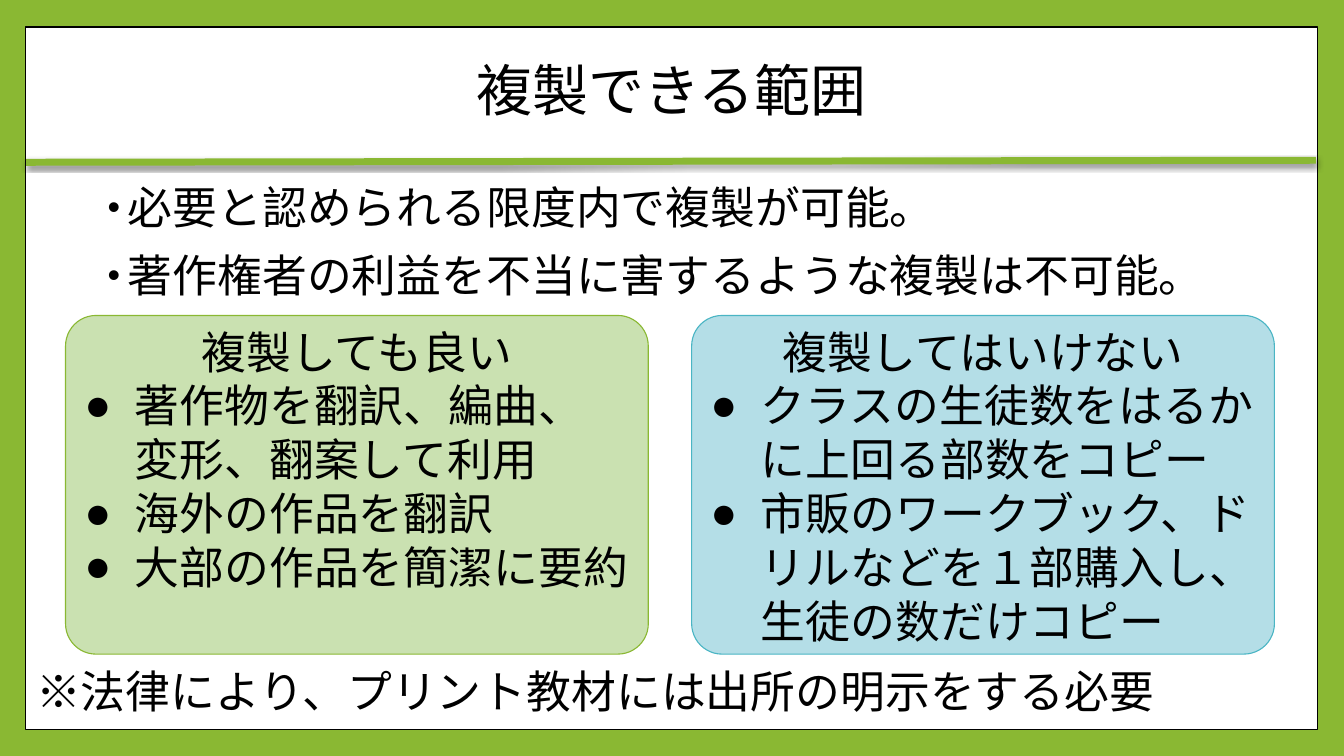
from dataclasses import dataclass

from lxml.etree import SubElement
from pptx import Presentation
from pptx.dml.color import RGBColor
from pptx.enum.shapes import MSO_CONNECTOR, MSO_SHAPE
from pptx.enum.text import MSO_ANCHOR, PP_ALIGN
from pptx.oxml.ns import qn
from pptx.slide import Slide
from pptx.text.text import TextFrame, _Paragraph
from pptx.util import Inches, Pt

GREEN = RGBColor(0x8A, 0xB8, 0x33)
PALE_GREEN = RGBColor(0xCA, 0xE1, 0xB1)
BLUE = RGBColor(0x4A, 0xB5, 0xC4)
PALE_BLUE = RGBColor(0xB4, 0xDE, 0xE7)
BLACK = RGBColor(0, 0, 0)
WHITE = RGBColor(0xFF, 0xFF, 0xFF)

BODY_FONT = "Arial"
TITLE_FONT = "Cabin"
BODY_SIZE = 32
TITLE_SIZE = 40


@dataclass(frozen=True)
class Card:
    left: float
    fill: RGBColor
    outline: RGBColor
    heading: str
    items: tuple[str, ...]


RULES = (
    "必要と認められる限度内で複製が可能。",
    "著作権者の利益を不当に害するような複製は不可能。",
)
CARDS = (
    Card(0.65, PALE_GREEN, GREEN, "複製しても良い", (
        "著作物を翻訳、編曲、　変形、翻案して利用",
        "海外の作品を翻訳",
        "大部の作品を簡潔に要約",
    )),
    Card(6.86, PALE_BLUE, BLUE, "複製してはいけない", (
        "クラスの生徒数をはるかに上回る部数をコピー",
        "市販のワークブック、ドリルなどを１部購入し、生徒の数だけコピー",
    )),
)


def add_paragraph(frame: TextFrame, text: str, align: PP_ALIGN = PP_ALIGN.LEFT,
                  font: str = BODY_FONT, size: int = BODY_SIZE) -> _Paragraph:
    """Fill the frame's first paragraph if it is empty, else append one."""
    first = frame.paragraphs[0]
    paragraph = frame.add_paragraph() if first.runs else first
    paragraph.alignment = align
    run = paragraph.add_run()
    run.text = text
    run.font.name = font
    run.font.size = Pt(size)
    run.font.color.rgb = BLACK
    return paragraph


def add_bullet(paragraph: _Paragraph, character: str, margin: float,
               hanging: float, percent: int = 100) -> None:
    properties = paragraph._p.get_or_add_pPr()
    properties.set("marL", str(Inches(margin)))
    properties.set("indent", str(-Inches(hanging)))
    color = SubElement(properties, qn("a:buClr"))
    SubElement(color, qn("a:srgbClr"), val=str(BLACK))
    SubElement(properties, qn("a:buSzPct"), val=str(percent * 1000))
    SubElement(properties, qn("a:buFont"), typeface=BODY_FONT)
    SubElement(properties, qn("a:buChar"), char=character)


def add_text_frame(slide: Slide, left: float, top: float, width: float,
                   height: float, wrap: bool = True) -> TextFrame:
    box = slide.shapes.add_textbox(
        Inches(left), Inches(top), Inches(width), Inches(height))
    box.text_frame.word_wrap = wrap
    return box.text_frame


def add_panel(slide: Slide) -> None:
    panel = slide.shapes.add_shape(
        MSO_SHAPE.RECTANGLE, Inches(0.25), Inches(0.27), Inches(12.82), Inches(6.97))
    panel.shadow.inherit = False
    panel.fill.solid()
    panel.fill.fore_color.rgb = WHITE
    panel.line.color.rgb = BLACK
    panel.line.width = Pt(1)


def add_divider(slide: Slide) -> None:
    divider = slide.shapes.add_connector(
        MSO_CONNECTOR.STRAIGHT, Inches(0.26), Inches(1.61), Inches(13.05), Inches(1.59))
    divider.line.color.rgb = GREEN
    divider.line.width = Pt(5)
    effects = SubElement(divider._element.spPr, qn("a:effectLst"))
    shadow = SubElement(effects, qn("a:outerShdw"), blurRad=str(Pt(3)),
                        dist=str(Pt(2)), dir="5400000", rotWithShape="0")
    color = SubElement(shadow, qn("a:srgbClr"), val=str(BLACK))
    SubElement(color, qn("a:alpha"), val="45000")


def add_title(slide: Slide) -> None:
    frame = add_text_frame(slide, 0.26, 0.36, 12.8, 1.14)
    frame.vertical_anchor = MSO_ANCHOR.MIDDLE
    title = add_paragraph(frame, "複製できる範囲", PP_ALIGN.CENTER, TITLE_FONT, TITLE_SIZE)
    title.line_spacing = 0.9


def add_rules(slide: Slide) -> None:
    frame = add_text_frame(slide, 0.92, 1.79, 11.5, 1.3)
    for rule in RULES:
        paragraph = add_paragraph(frame, rule)
        paragraph.line_spacing = 0.9
        paragraph.space_before = Pt(14)
        add_bullet(paragraph, "•", 0.25, 0.2, 80)


def add_card(slide: Slide, card: Card) -> None:
    shape = slide.shapes.add_shape(
        MSO_SHAPE.ROUNDED_RECTANGLE, Inches(card.left), Inches(3.13),
        Inches(5.78), Inches(3.36))
    shape.adjustments[0] = 0.09
    shape.shadow.inherit = False
    shape.fill.solid()
    shape.fill.fore_color.rgb = card.fill
    shape.line.color.rgb = card.outline
    shape.line.width = Pt(0.79)
    frame = shape.text_frame
    frame.word_wrap = True
    frame.vertical_anchor = MSO_ANCHOR.TOP
    frame.margin_top = frame.margin_bottom = 0
    add_paragraph(frame, card.heading, PP_ALIGN.CENTER)
    for item in card.items:
        add_bullet(add_paragraph(frame, item), "●", 0.5, 0.5)


def main() -> None:
    presentation = Presentation()
    presentation.slide_width = Inches(13.33)
    presentation.slide_height = Inches(7.5)
    slide = presentation.slides.add_slide(presentation.slide_layouts[6])
    slide.background.fill.solid()
    slide.background.fill.fore_color.rgb = GREEN

    add_panel(slide)
    add_divider(slide)
    add_title(slide)
    add_rules(slide)
    for card in CARDS:
        add_card(slide, card)
    footnote = add_text_frame(slide, 0.26, 6.54, 11.42, 0.64, wrap=False)
    add_paragraph(footnote, "※法律により、プリント教材には出所の明示をする必要")

    presentation.save("out.pptx")


if __name__ == "__main__":
    main()
